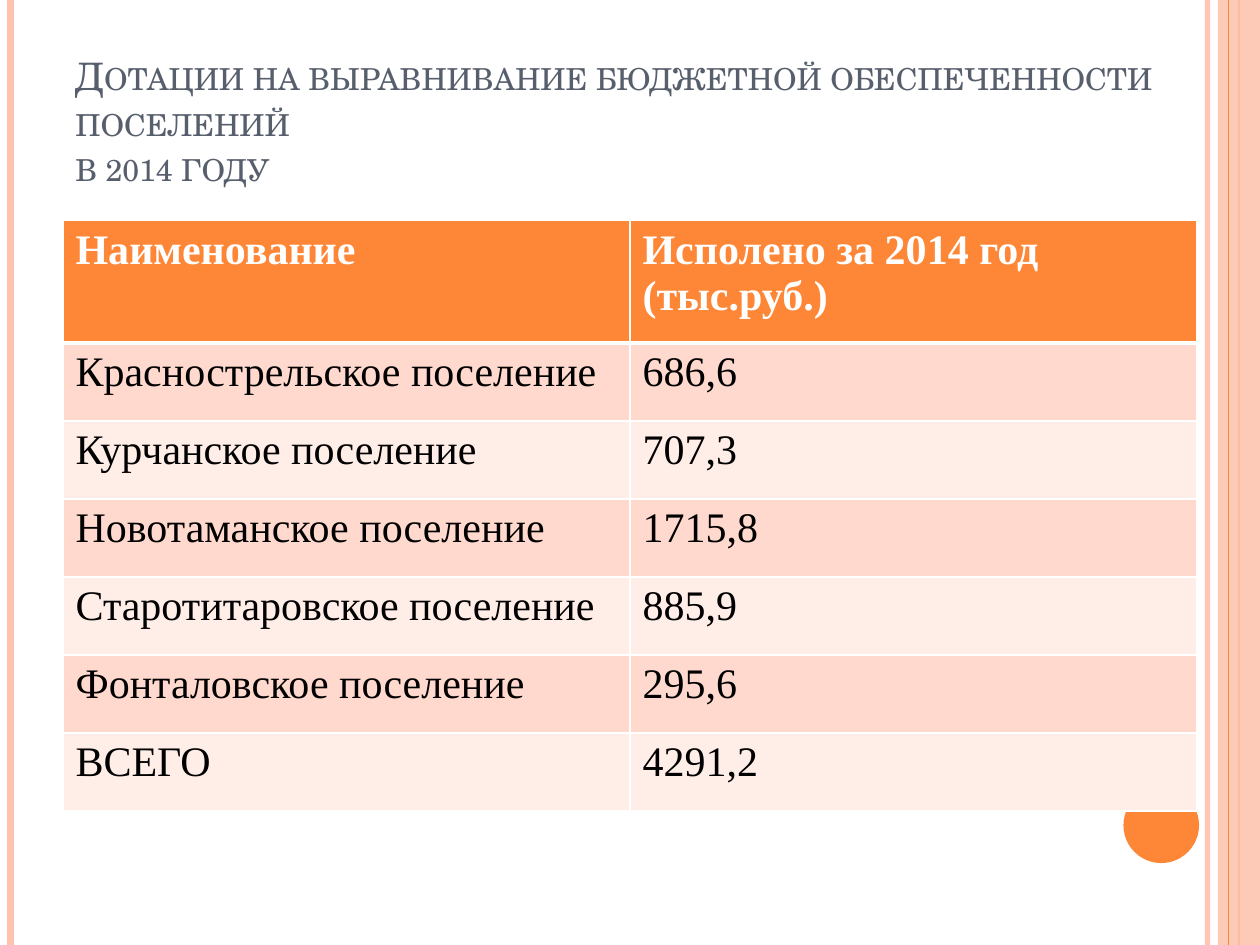
from dataclasses import dataclass

from lxml.etree import SubElement
from pptx import Presentation
from pptx.dml.color import RGBColor
from pptx.enum.shapes import MSO_CONNECTOR, MSO_SHAPE
from pptx.enum.text import MSO_ANCHOR
from pptx.oxml.ns import qn
from pptx.util import Pt

ORANGE = "FE8637"
PEACH = "FEC3AE"
WHITE = "FFFFFF"
BLACK = "000000"
SLATE = "575F6D"
BANDS = ("FFD9CE", "FFEDE8")
PAGE_HEIGHT = 540


@dataclass
class Stripe:
    x: float
    width: float
    color: str
    opacity: int = 100


@dataclass
class Block:
    kind: MSO_SHAPE
    left: float
    top: float
    width: float
    height: float
    color: str
    opacity: int = 100


ROWS = [
    ("Наименование", "Исполено за 2014 год (тыс.руб.)"),
    ("Краснострельское поселение", "686,6"),
    ("Курчанское поселение", "707,3"),
    ("Новотаманское поселение", "1715,8"),
    ("Старотитаровское поселение", "885,9"),
    ("Фонталовское поселение", "295,6"),
    ("ВСЕГО", "4291,2"),
]


def paint(target, color: str, opacity: int = 100) -> None:
    """Give a fill (of a shape, line or cell) one solid colour."""
    target.solid()
    target.fore_color.rgb = RGBColor.from_string(color)
    if opacity < 100:
        for tone in target._xPr.iter(qn("a:srgbClr")):
            SubElement(tone, qn("a:alpha"), val=str(opacity * 1000))


def set_font(paragraph, name: str, size: float, color: str, bold: bool = False) -> None:
    font = paragraph.font
    font.name, font.size, font.bold = name, Pt(size), bold
    paint(font.fill, color)


def draw_stripe(page, stripe: Stripe) -> None:
    line = page.shapes.add_connector(
        MSO_CONNECTOR.STRAIGHT, Pt(stripe.x), Pt(0), Pt(stripe.x), Pt(PAGE_HEIGHT))
    line.line.width = Pt(stripe.width)
    paint(line.line.fill, stripe.color, stripe.opacity)
    SubElement(line._element.spPr, qn("a:effectLst"))


def draw_block(page, block: Block) -> None:
    shape = page.shapes.add_shape(
        block.kind, Pt(block.left), Pt(block.top), Pt(block.width), Pt(block.height))
    shape.shadow.inherit = False
    paint(shape.fill, block.color, block.opacity)
    shape.line.fill.background()


def draw_title(page) -> None:
    box = page.shapes.add_textbox(Pt(36), Pt(21.6), Pt(648), Pt(90))
    frame = box.text_frame
    frame.word_wrap = True
    frame.vertical_anchor = MSO_ANCHOR.BOTTOM
    paragraph = frame.paragraphs[0]
    paragraph.text = "Дотации на выравнивание бюджетной обеспеченности поселений\vв 2014 году"
    set_font(paragraph, "TeX Gyre Schola", 21.6, SLATE)
    for span in paragraph.runs:
        span._r.get_or_add_rPr().set("cap", "small")


def set_borders(cell, bottom: float) -> None:
    properties = cell._tc.get_or_add_tcPr()
    sides = (("lnL", 1), ("lnR", 1), ("lnT", 1), ("lnB", bottom))
    for position, (side, width) in enumerate(sides):
        border = SubElement(properties, qn(f"a:{side}"), w=str(Pt(width)))
        SubElement(SubElement(border, qn("a:solidFill")), qn("a:srgbClr"), val=WHITE)
        properties.insert(position, border)


def draw_table(page) -> None:
    header_height, row_height = 70, 44.6
    total = header_height + row_height * (len(ROWS) - 1)
    table = page.shapes.add_table(len(ROWS), 2, Pt(36), Pt(126), Pt(648), Pt(total)).table
    for index, texts in enumerate(ROWS):
        header = index == 0
        table.rows[index].height = Pt(header_height if header else row_height)
        for column, text in enumerate(texts):
            cell = table.cell(index, column)
            cell.text = text
            set_font(cell.text_frame.paragraphs[0], "Times New Roman", 24,
                     WHITE if header else BLACK, header)
            paint(cell.fill, ORANGE if header else BANDS[(index - 1) % 2])
            set_borders(cell, 3 if header else 1)


def main() -> None:
    deck = Presentation()
    deck.slide_width, deck.slide_height = Pt(720), Pt(PAGE_HEIGHT)
    page = deck.slides.add_slide(deck.slide_layouts[6])

    # Side stripes and disc
    for stripe in (Stripe(690, 3, PEACH, 93), Stripe(6, 4.5, PEACH), Stripe(708, 1.5, ORANGE)):
        draw_stripe(page, stripe)
    draw_block(page, Block(MSO_SHAPE.RECTANGLE, 696, 0, 24, PAGE_HEIGHT, PEACH, 87))
    draw_stripe(page, Stripe(702, 0.75, ORANGE))
    draw_block(page, Block(MSO_SHAPE.OVAL, 642, 450, 43.2, 43.2, ORANGE))

    # Title and grants by settlement
    draw_title(page)
    draw_table(page)
    deck.save("out.pptx")


if __name__ == "__main__":
    main()
